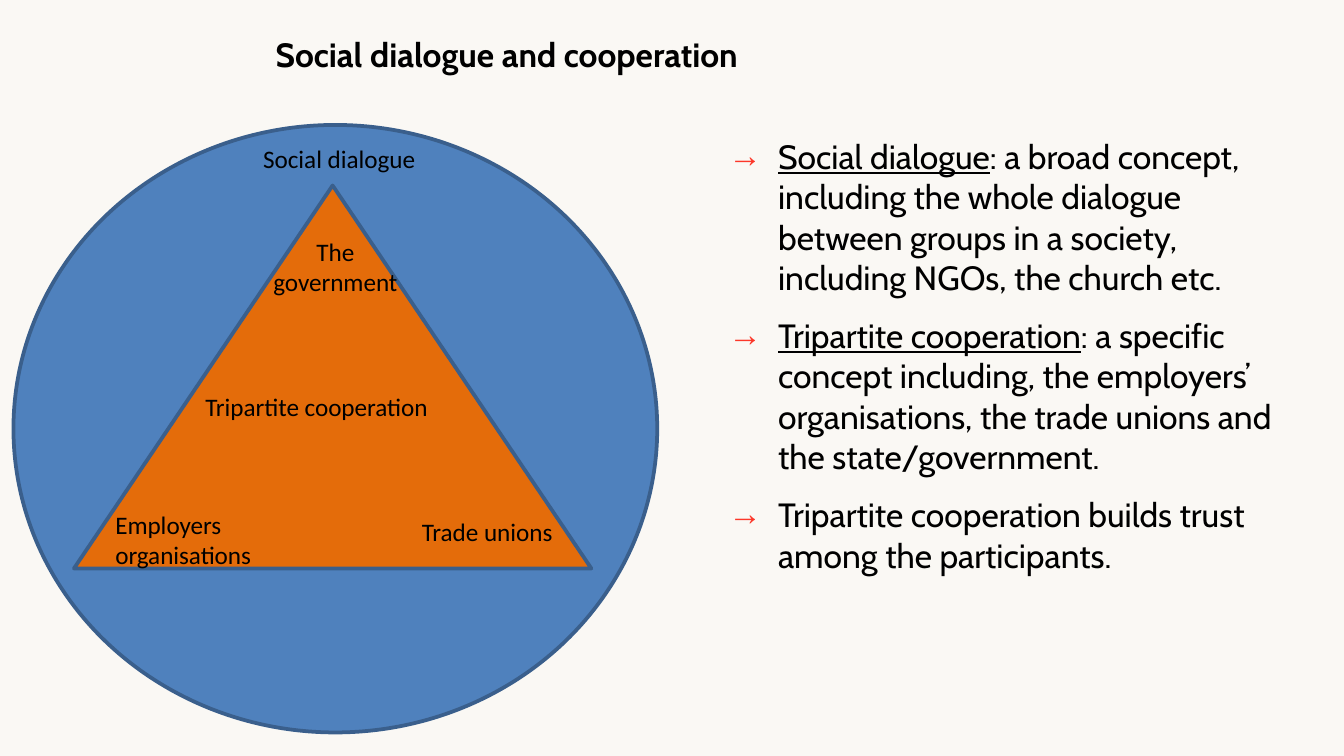
from lxml.etree import SubElement
from pptx import Presentation
from pptx.dml.color import RGBColor
from pptx.enum.shapes import MSO_SHAPE
from pptx.enum.text import MSO_ANCHOR, MSO_AUTO_SIZE, PP_ALIGN
from pptx.oxml.ns import qn
from pptx.util import Inches, Pt

COLORS = {
    "background": "FAF8F4",
    "circle": "4F81BD",
    "triangle": "E46C0A",
    "outline": "3A5F8C",
    "text": "000000",
    "arrow": "FC3729",
}


def rgb(name):
    return RGBColor.from_string(COLORS[name])


def style(font, name, size):
    font.name = name
    font.size = Pt(size)
    font.color.rgb = rgb("text")


# Widescreen page, 16:9
deck = Presentation()
deck.slide_width = Inches(10)
deck.slide_height = Inches(10 * 9 / 16)
page = deck.slides.add_slide(deck.slide_layouts[5])
page.background.fill.solid()
page.background.fill.fore_color.rgb = rgb("background")

# Title
title = page.shapes.title
title.left, title.top = Inches(1.95), Inches(0.2)
title.width, title.height = Inches(3.92), Inches(0.4)
frame = title.text_frame
frame.text = "Social dialogue and cooperation"
frame.auto_size = MSO_AUTO_SIZE.NONE
frame.vertical_anchor = MSO_ANCHOR.TOP
frame.paragraphs[0].alignment = PP_ALIGN.LEFT
title_font = frame.paragraphs[0].runs[0].font
style(title_font, "Cabin", 18)
title_font.bold = True

# Triangle of tripartite cooperation inside the circle of social dialogue
for preset, fill, left, top, width, height in (
    (MSO_SHAPE.OVAL, "circle", 0.1, 0.93, 4.79, 4.52),
    (MSO_SHAPE.ISOSCELES_TRIANGLE, "triangle", 0.55, 1.38, 3.85, 2.85),
):
    shape = page.shapes.add_shape(
        preset, Inches(left), Inches(top), Inches(width), Inches(height))
    shape.shadow.inherit = False
    shape.fill.solid()
    shape.fill.fore_color.rgb = rgb(fill)
    shape.line.color.rgb = rgb("outline")
    shape.line.width = Pt(2)

for text, left, top, width, height, alignment in (
    ("The government", 1.8, 1.71, 1.39, 0.56, PP_ALIGN.CENTER),
    ("Employers organisations", 0.76, 3.74, 1.34, 0.56, PP_ALIGN.LEFT),
    ("Tripartite cooperation", 1.43, 2.86, 2.17, 0.33, PP_ALIGN.LEFT),
    ("Social dialogue", 1.86, 1.02, 2.17, 0.33, PP_ALIGN.LEFT),
    ("Trade unions", 3.04, 3.79, 2.17, 0.33, PP_ALIGN.LEFT),
):
    label = page.shapes.add_textbox(
        Inches(left), Inches(top), Inches(width), Inches(height))
    label.text_frame.word_wrap = True
    label.text_frame.text = text
    para = label.text_frame.paragraphs[0]
    para.alignment = alignment
    style(para.runs[0].font, "Calibri", 13.5)

# Definitions: underlined term followed by its explanation
definitions = (
    ("Social dialogue", ": a broad concept, including the whole dialogue "
     "between groups in a society, including NGOs, the church etc."),
    ("Tripartite cooperation", ": a specific concept including, the employers’ "
     "organisations, the trade unions and the state/government."),
    ("", "Tripartite cooperation builds trust among the participants."),
)
box = page.shapes.add_textbox(
    Inches(5.34), Inches(0.97), Inches(4.37), Inches(4.19))
frame = box.text_frame
frame.word_wrap = True
frame.margin_left = frame.margin_right = Inches(0.07)
frame.margin_top = frame.margin_bottom = Inches(0.04)
for index, (term, explanation) in enumerate(definitions):
    para = frame.add_paragraph() if index else frame.paragraphs[0]
    para.space_before = Pt(3.6 if index else 0)
    para.space_after = Pt(6)
    properties = para._p.get_or_add_pPr()
    properties.set("marL", str(Inches(0.38)))
    properties.set("indent", str(Inches(-0.37)))
    bullet_color = SubElement(properties, qn("a:buClr"))
    SubElement(bullet_color, qn("a:srgbClr"), val=COLORS["arrow"])
    SubElement(properties, qn("a:buFont"), typeface="Arial")
    SubElement(properties, qn("a:buChar"), char="→")
    for text, underlined in ((term, True), (explanation, False)):
        if text:
            span = para.add_run()
            span.text = text
            style(span.font, "Cabin", 18)
            span.font.underline = underlined

deck.save("out.pptx")
